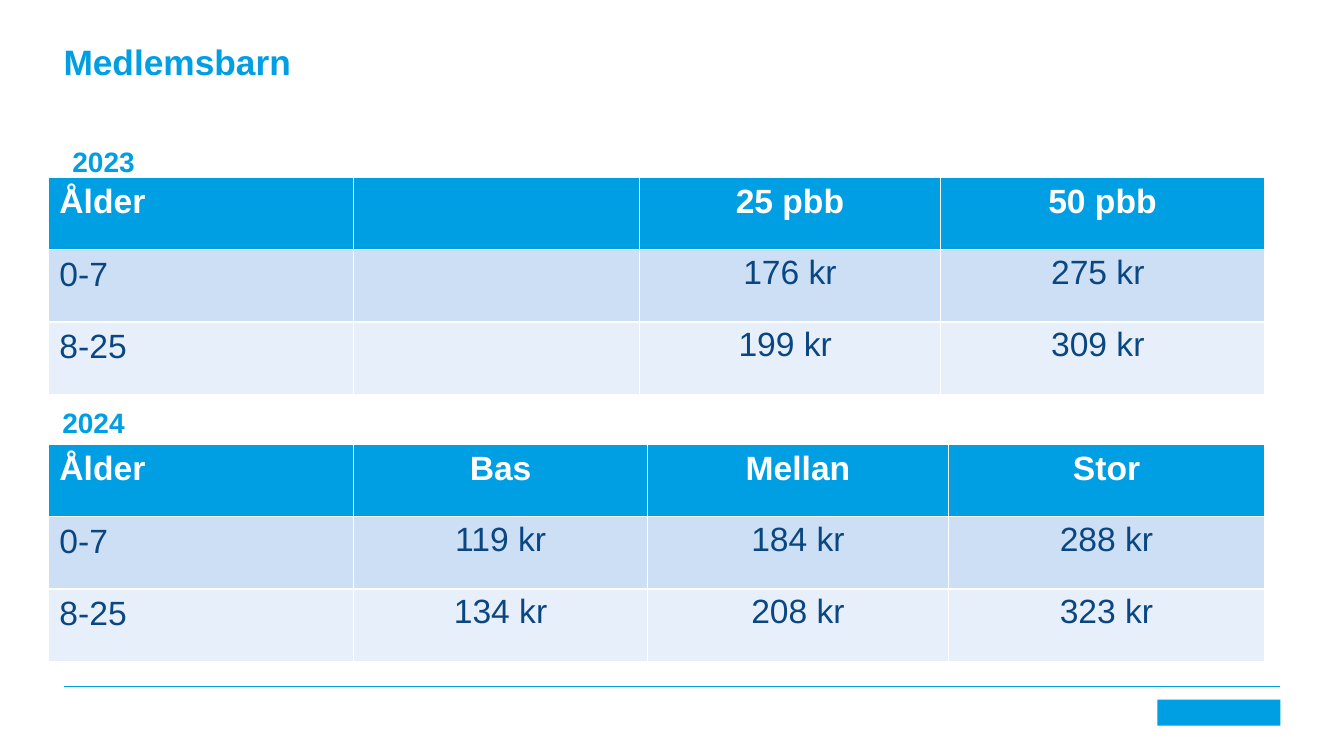
from lxml import etree
from pptx import Presentation
from pptx.dml.color import RGBColor
from pptx.enum.shapes import MSO_CONNECTOR, MSO_SHAPE
from pptx.enum.text import MSO_ANCHOR, PP_ALIGN
from pptx.oxml.ns import qn
from pptx.util import Inches, Pt

STRAIGHT = MSO_CONNECTOR.STRAIGHT
RECTANGLE = MSO_SHAPE.RECTANGLE
TOP = MSO_ANCHOR.TOP
LEFT, CENTER = PP_ALIGN.LEFT, PP_ALIGN.CENTER

BLUE = RGBColor(0x00, 0x9F, 0xE4)
NAVY = RGBColor(0x0A, 0x46, 0x82)
WHITE = RGBColor(0xFF, 0xFF, 0xFF)
BAND_DARK = RGBColor(0xCC, 0xDF, 0xF5)
BAND_LIGHT = RGBColor(0xE7, 0xF0, 0xFA)
ROW_FILLS = [BLUE, BAND_DARK, BAND_LIGHT]

FONT = "Arial"
TITLE_ONLY = 5
ROW_HEIGHT = 0.717

PRICES_2023 = [
    ["Ålder", "", "25 pbb", "50 pbb"],
    ["0-7", "", "176 kr", "275 kr "],
    ["8-25", "", "199 kr ", "309 kr "],
]
PRICES_2024 = [
    ["Ålder", "Bas", "Mellan", "Stor"],
    ["0-7", "119 kr", "184 kr", "288 kr"],
    ["8-25", "134 kr", "208 kr", "323 kr"],
]


def write_text(frame, text, size, color, bold=False, align=LEFT):
    paragraph = frame.paragraphs[0]
    paragraph.alignment = align
    run = paragraph.add_run()
    run.text = text
    run.font.name = FONT
    run.font.size = Pt(size)
    run.font.bold = bold
    run.font.color.rgb = color


def set_margins(box, horizontal, vertical):
    box.margin_left = box.margin_right = Inches(horizontal)
    box.margin_top = box.margin_bottom = Inches(vertical)


def add_title(slide, left, top, width, height):
    title = slide.shapes.title
    title.left, title.top = Inches(left), Inches(top)
    title.width, title.height = Inches(width), Inches(height)
    frame = title.text_frame
    frame.vertical_anchor = TOP
    set_margins(frame, 0, 0.04)
    write_text(frame, "Medlemsbarn", 25.2, BLUE, bold=True)


def add_year(slide, year, left, top):
    label = slide.shapes.add_textbox(
        Inches(left), Inches(top), Inches(1.17), Inches(0.44))
    label.text_frame.word_wrap = True
    write_text(label.text_frame, year, 20, BLUE, bold=True)


def add_price_table(slide, rows, left, top, column_widths):
    table = slide.shapes.add_table(
        len(rows), len(column_widths), Inches(left), Inches(top),
        Inches(sum(column_widths)), Inches(ROW_HEIGHT * len(rows))).table
    for column, width in zip(table.columns, column_widths):
        column.width = Inches(width)
    for row_index, row in enumerate(rows):
        table.rows[row_index].height = Inches(ROW_HEIGHT)
        is_header = row_index == 0
        for column_index, text in enumerate(row):
            cell = table.cell(row_index, column_index)
            cell.fill.solid()
            cell.fill.fore_color.rgb = ROW_FILLS[row_index]
            if is_header or column_index == 0:
                set_margins(cell, 0.11, 0.06)
            else:
                set_margins(cell, 0.08, 0.04)
            if text:
                write_text(cell.text_frame, text, 24,
                           WHITE if is_header else NAVY, bold=is_header,
                           align=CENTER if column_index else LEFT)


def add_footer(slide, left, top, width):
    # Rule across the content width
    rule = slide.shapes.add_connector(
        STRAIGHT, Inches(left), Inches(top), Inches(left + width), Inches(top))
    rule.line.color.rgb = BLUE
    rule.line.width = Pt(0.5)
    etree.SubElement(rule._element.spPr, qn("a:effectLst"))

    # Plain brand block, flush with the right end of the rule
    block_width = 1.22
    block = slide.shapes.add_shape(
        RECTANGLE, Inches(left + width - block_width), Inches(top + 0.13),
        Inches(block_width), Inches(0.26))
    block.shadow.inherit = False
    block.fill.solid()
    block.fill.fore_color.rgb = BLUE
    block.line.fill.background()


def build_price_slide(presentation):
    slide = presentation.slides.add_slide(
        presentation.slide_layouts[TITLE_ONLY])
    add_footer(slide, 0.63, 6.81, 12.07)
    add_title(slide, 0.63, 0.36, 12.07, 0.79)

    # Prices for 2024
    add_price_table(slide, PRICES_2024, 0.48, 4.41, [3.03, 2.91, 2.99, 3.13])
    add_year(slide, "2024", 0.52, 3.97)

    # Prices for 2023
    add_year(slide, "2023", 0.62, 1.38)
    add_price_table(slide, PRICES_2023, 0.48, 1.76, [3.03, 2.83, 2.99, 3.21])


def main():
    presentation = Presentation()
    presentation.slide_width = Inches(13.33)
    presentation.slide_height = Inches(7.5)
    build_price_slide(presentation)
    presentation.save("out.pptx")


if __name__ == "__main__":
    main()
